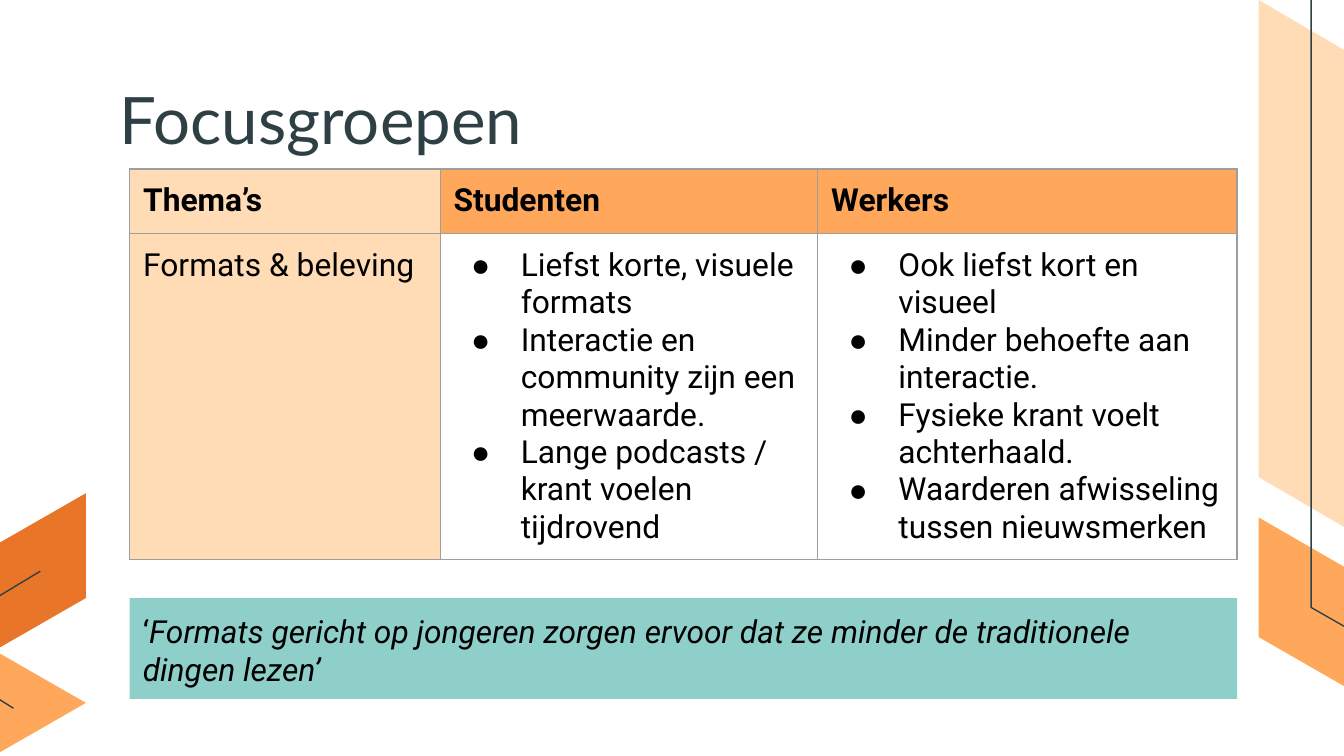
from lxml import etree
from pptx import Presentation
from pptx.dml.color import RGBColor
from pptx.enum.shapes import MSO_SHAPE
from pptx.enum.text import MSO_ANCHOR, MSO_AUTO_SIZE, PP_ALIGN
from pptx.oxml.ns import qn
from pptx.util import Inches, Pt

RECT = MSO_SHAPE.RECTANGLE
TOP = MSO_ANCHOR.TOP
LEFT = PP_ALIGN.LEFT
NO_FIT = MSO_AUTO_SIZE.NONE
COLORS = {"ink": "2F4044", "text": "000000", "peach": "FFDCB6", "orange": "FFA85C",
          "rust": "E97529", "teal": "8ECFC9", "border": "9E9E9E"}
UNIT = Inches(0.1)
COLUMNS, ROWS = 100, 56.25
PAD = 1
THEMES = ["Thema’s", "Studenten", "Werkers"]
FINDINGS = [
    ["Formats & beleving"],
    ["Liefst korte, visuele formats", "Interactie en community zijn een meerwaarde.",
     "Lange podcasts / krant voelen tijdrovend"],
    ["Ook liefst kort en visueel", "Minder behoefte aan interactie.",
     "Fysieke krant voelt achterhaald.", "Waarderen afwisseling tussen nieuwsmerken"],
]


def grid(*cells):
    """Turn grid columns or rows into lengths."""
    return [int(round(c * UNIT)) for c in cells]


def rgb(name):
    """Look up a palette colour."""
    return RGBColor.from_string(COLORS[name])


def add_run(p, text, size=17, font="Roboto", color="text", bold=False, italic=False):
    """Add one formatted run to a paragraph."""
    r = p.add_run()
    r.text = text
    r.font.size, r.font.name = Pt(size), font
    r.font.bold, r.font.italic = bold, italic
    r.font.color.rgb = rgb(color)


def set_margins(obj, top=PAD):
    """Pad a text frame or a cell."""
    obj.margin_left, obj.margin_right, obj.margin_bottom = grid(PAD, PAD, PAD)
    obj.margin_top = grid(top)[0]


def add_bullet(p):
    """Give a paragraph a hanging round bullet."""
    pPr = p._p.get_or_add_pPr()
    pPr.set("marL", str(Inches(0.5)))
    pPr.set("indent", str(-Inches(0.37)))
    clr = etree.SubElement(pPr, qn("a:buClr"))
    etree.SubElement(clr, qn("a:srgbClr"), val=COLORS["text"])
    etree.SubElement(pPr, qn("a:buFont"), typeface="Arial")
    etree.SubElement(pPr, qn("a:buChar"), char="●")


def add_borders(cell):
    """Draw thin grey lines around a cell."""
    tcPr = cell._tc.get_or_add_tcPr()
    for side in ("lnL", "lnR", "lnT", "lnB"):
        ln = etree.SubElement(tcPr, qn(f"a:{side}"), w=str(Pt(0.75)))
        fill = etree.SubElement(ln, qn("a:solidFill"))
        etree.SubElement(fill, qn("a:srgbClr"), val=COLORS["border"])


def add_outline(slide, box, points, fill=None):
    """Draw a filled polygon, or an open thin line when there is no fill."""
    corners = [grid(box[0] + x, box[1] + y) for x, y in points]
    builder = slide.shapes.build_freeform(*corners[0], scale=1.0)
    builder.add_line_segments(corners[1:], close=fill is not None)
    sp = builder.convert_to_shape()
    sp.shadow.inherit = False
    if fill:
        sp.fill.solid()
        sp.fill.fore_color.rgb = rgb(fill)
        sp.line.fill.background()
    else:
        sp.fill.background()
        sp.line.color.rgb = rgb("ink")
        sp.line.width = Pt(0.75)


def add_right_ribbon(slide, box):
    """Place the folded ribbon along the right edge."""
    h = box[3]
    add_outline(slide, box, [(0, 0), (0, 35.5), (7.7, 40), (7.7, 4.5)], "peach")
    add_outline(slide, box, [(0, 38.5), (15.4, 47.4), (15.4, h), (0, 47.4)], "orange")
    add_outline(slide, box, [(3.9, 0), (3.9, 45.2), (20, 54.4)])


def add_left_ribbon(slide, box):
    """Place the folded ribbon in the lower left corner."""
    w, h = box[2:]
    add_outline(slide, box, [(-0.4, 3.9), (w, 0), (w, 7.8), (-0.4, 11.7)], "rust")
    add_outline(slide, box, [(-0.4, h), (-7.2, 15.6), (-0.4, 11.7), (w, 15.6)], "orange")
    add_outline(slide, box, [(1, 16), (-3.3, 13.3), (-3.3, 9.6), (3, 5.8)])


def add_title(slide, box):
    """Fill the title placeholder."""
    sp = slide.shapes.title
    sp.left, sp.top, sp.width, sp.height = grid(*box)
    tf = sp.text_frame
    tf.auto_size, tf.vertical_anchor, tf.word_wrap = NO_FIT, TOP, True
    set_margins(tf, top=0)
    p = tf.paragraphs[0]
    p.alignment = LEFT
    add_run(p, "Focusgroepen", 35, "Lato", "ink")


def fill_cell(cell, lines, fill=None, bold=False, bullets=False):
    """Write and format one table cell."""
    set_margins(cell)
    add_borders(cell)
    if fill:
        cell.fill.solid()
        cell.fill.fore_color.rgb = rgb(fill)
    else:
        cell.fill.background()
    tf = cell.text_frame
    for i, line in enumerate(lines):
        p = tf.add_paragraph() if i else tf.paragraphs[0]
        if bullets:
            add_bullet(p)
        add_run(p, line, bold=bold)


def add_findings(slide, box):
    """Place the table of findings for each focus group."""
    table = slide.shapes.add_table(2, len(THEMES), *grid(*box)).table
    table.first_row = table.horz_banding = False
    header = 4.8
    table.rows[0].height, table.rows[1].height = grid(header, box[3] - header)
    first, second = 23.1, 28.1
    for col, width in zip(table.columns, grid(first, second, box[2] - first - second)):
        col.width = width
    for c, (theme, lines) in enumerate(zip(THEMES, FINDINGS)):
        fill_cell(table.cell(0, c), [theme], "orange" if c else "peach", bold=True)
        fill_cell(table.cell(1, c), lines, None if c else "peach", bullets=c > 0)


def add_quote(slide, box):
    """Place the quote on a teal bar."""
    sp = slide.shapes.add_shape(RECT, *grid(*box))
    sp.shadow.inherit = False
    sp.fill.solid()
    sp.fill.fore_color.rgb = rgb("teal")
    sp.line.fill.background()
    tf = sp.text_frame
    tf.word_wrap, tf.vertical_anchor = True, TOP
    set_margins(tf)
    p = tf.paragraphs[0]
    p.alignment = LEFT
    add_run(p, "‘")
    add_run(p, "Formats gericht op jongeren zorgen ervoor dat ze minder de "
               "traditionele dingen lezen’", italic=True)


def main():
    """Build and save the slide."""
    prs = Presentation()
    prs.slide_width, prs.slide_height = grid(COLUMNS, ROWS)
    slide = prs.slides.add_slide(prs.slide_layouts[5])
    add_right_ribbon(slide, (93.65, 0, 6.35, ROWS))
    add_left_ribbon(slide, (0, 36.7, 6.4, 19.5))
    add_title(slide, (7.9, 5.9, 84.3, 5.7))
    add_findings(slide, (9.65, 12.57, 82.4, 29))
    add_quote(slide, (9.65, 44.5, 82.4, 7.5))
    prs.save("out.pptx")


if __name__ == "__main__":
    main()
